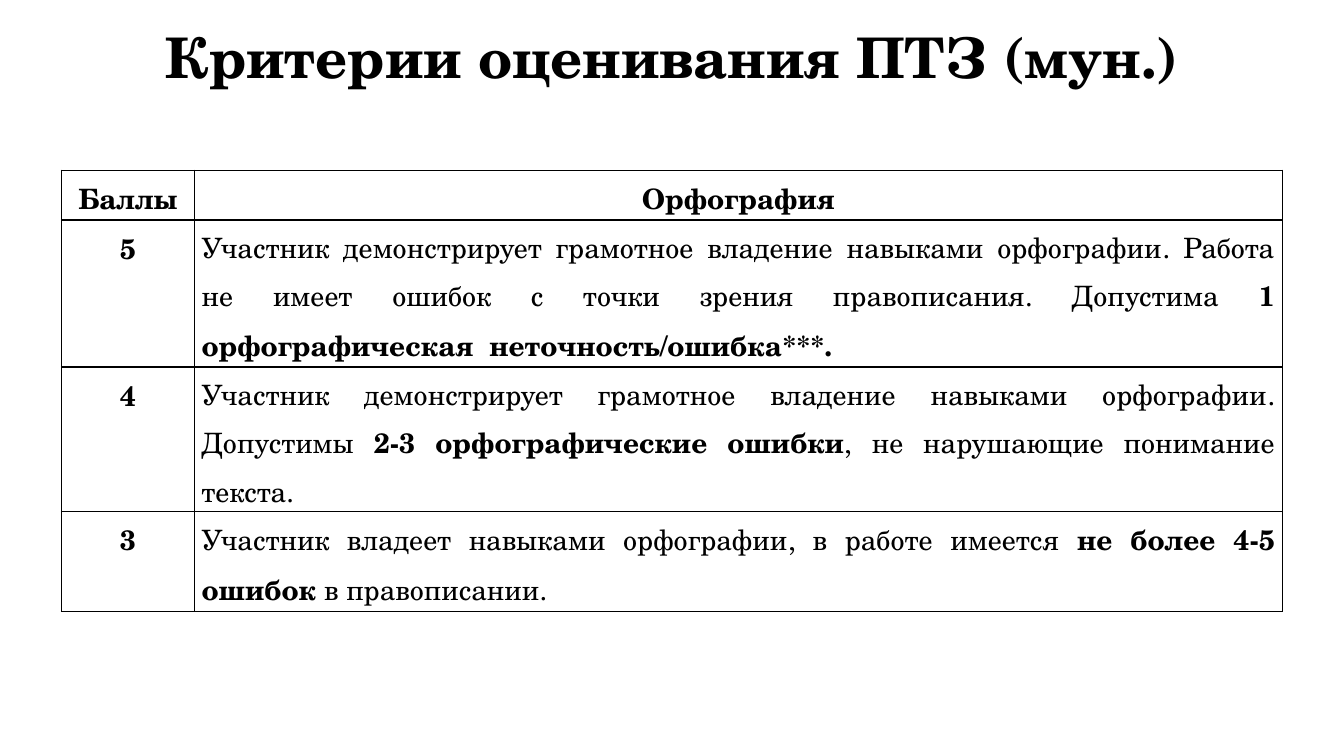
from lxml import etree
from pptx import Presentation
from pptx.dml.color import RGBColor
from pptx.enum.text import MSO_ANCHOR, MSO_AUTO_SIZE, PP_ALIGN
from pptx.oxml.ns import qn
from pptx.util import Cm, Pt

CENTER, JUSTIFY = PP_ALIGN.CENTER, PP_ALIGN.JUSTIFY
MIDDLE, NO_FIT = MSO_ANCHOR.MIDDLE, MSO_AUTO_SIZE.NONE
BLACK = RGBColor(0, 0, 0)
WHITE = RGBColor(255, 255, 255)
FONT = "TeX Gyre Schola"

# Each cell is a list of (text, bold) runs
ROWS = [
    [[("Баллы", True)], [("Орфография", True)]],
    [[("5", True)], [
        ("Участник демонстрирует грамотное владение навыками орфографии. "
         "Работа не имеет ошибок с точки зрения правописания. Допустима ", False),
        ("1 орфографическая  неточность/ошибка***.", True)]],
    [[("4", True)], [
        ("Участник демонстрирует грамотное владение навыками орфографии. "
         "Допустимы ", False),
        ("2-3 орфографические ошибки", True),
        (", не нарушающие понимание текста.", False)]],
    [[("3", True)], [
        ("Участник владеет навыками орфографии, в работе имеется ", False),
        ("не более 4-5 ошибок ", True),
        ("в правописании.", False)]],
]
WIDTHS = [Cm(3.35), Cm(27.41)]
HEIGHTS = [Cm(1.09), Cm(3.61), Cm(3.43), Cm(2.29)]


def apply(obj, values):
    for name, value in values.items():
        setattr(obj, name, value)


class Page:
    def __init__(self, deck):
        self.slide = deck.slides.add_slide(deck.slide_layouts[5])
        self.para = {"line_spacing": 1.15, "space_before": Pt(2),
                     "space_after": Pt(2)}
        self.inset = {"margin_left": Cm(0.18), "margin_right": Cm(0.18),
                      "margin_top": 0, "margin_bottom": 0}

    def text(self, para, runs, size, form):
        apply(para, form)
        for words, bold in runs:
            run = para.add_run()
            run.text = words
            apply(run.font, {"name": FONT, "size": Pt(size), "bold": bold})
            run.font.color.rgb = BLACK

    def title(self, words):
        head = self.slide.shapes.title
        apply(head, {"left": Cm(2.34), "top": Cm(0.53),
                     "width": Cm(29.21), "height": Cm(1.98)})
        frame = head.text_frame
        apply(frame, {"vertical_anchor": MIDDLE, "word_wrap": True,
                      "auto_size": NO_FIT})
        self.text(frame.paragraphs[0], [(words, True)], 40,
                  {"alignment": CENTER, "line_spacing": 0.9, "space_before": 0})

    def border(self, cell):
        props = cell._tc.get_or_add_tcPr()
        for side in ("lnL", "lnR", "lnT", "lnB"):
            line = etree.SubElement(props, qn(f"a:{side}"), w=str(Pt(1)))
            fill = etree.SubElement(line, qn("a:solidFill"))
            etree.SubElement(fill, qn("a:srgbClr"), val=str(BLACK))

    def cell(self, cell, runs, align):
        apply(cell, self.inset)
        self.border(cell)
        cell.fill.solid()
        cell.fill.fore_color.rgb = WHITE
        self.text(cell.text_frame.paragraphs[0], runs, 20,
                  {"alignment": align, **self.para})

    def table(self, rows, left, top):
        grid = self.slide.shapes.add_table(
            len(rows), len(WIDTHS), left, top, sum(WIDTHS), sum(HEIGHTS)).table
        apply(grid, {"first_row": False, "horz_banding": False})
        for col, width in zip(grid.columns, WIDTHS):
            col.width = width
        for r, (row, height) in enumerate(zip(rows, HEIGHTS)):
            grid.rows[r].height = height
            for c, runs in enumerate(row):
                align = JUSTIFY if r and c else CENTER
                self.cell(grid.cell(r, c), runs, align)


def main():
    deck = Presentation()
    deck.slide_width, deck.slide_height = Cm(33.87), Cm(19.05)
    page = Page(deck)
    # Heading
    page.title("Критерии оценивания ПТЗ (мун.)")
    # Table of marks
    page.table(ROWS, Cm(1.55), Cm(4.29))
    deck.save("out.pptx")


if __name__ == "__main__":
    main()
